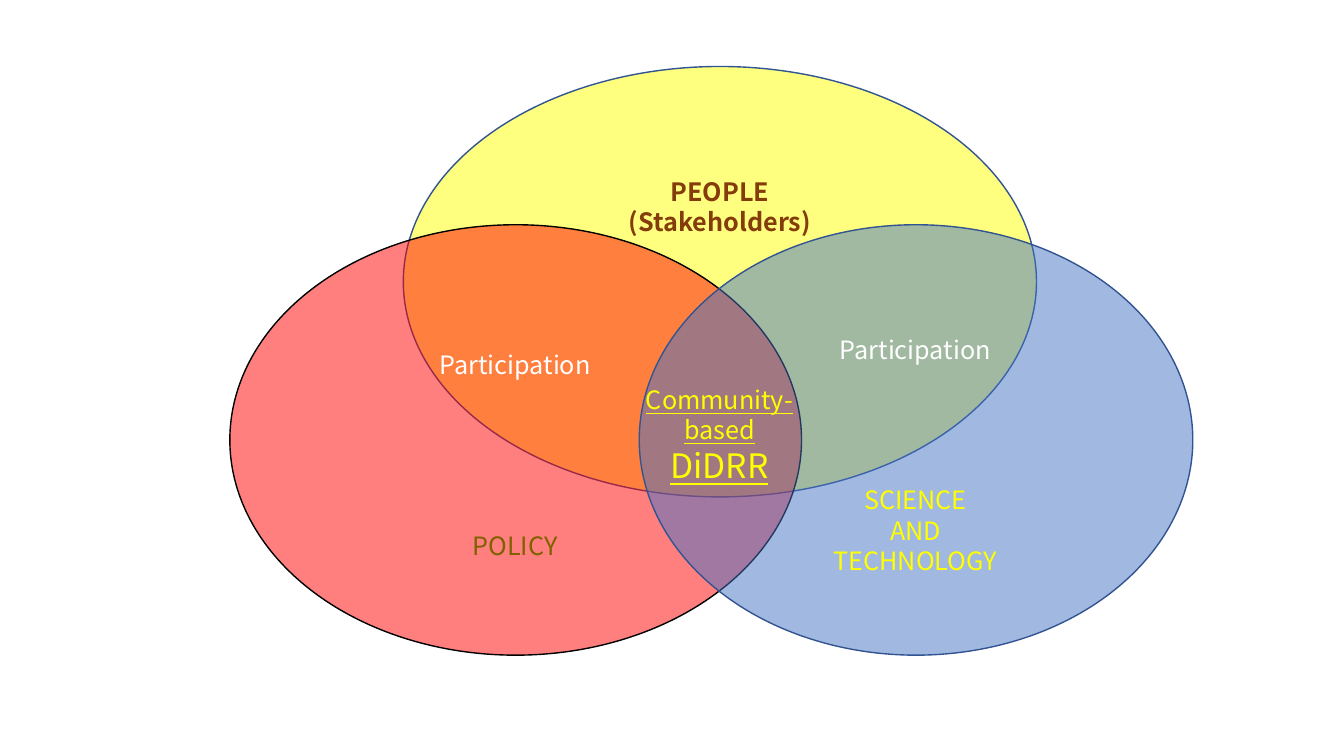
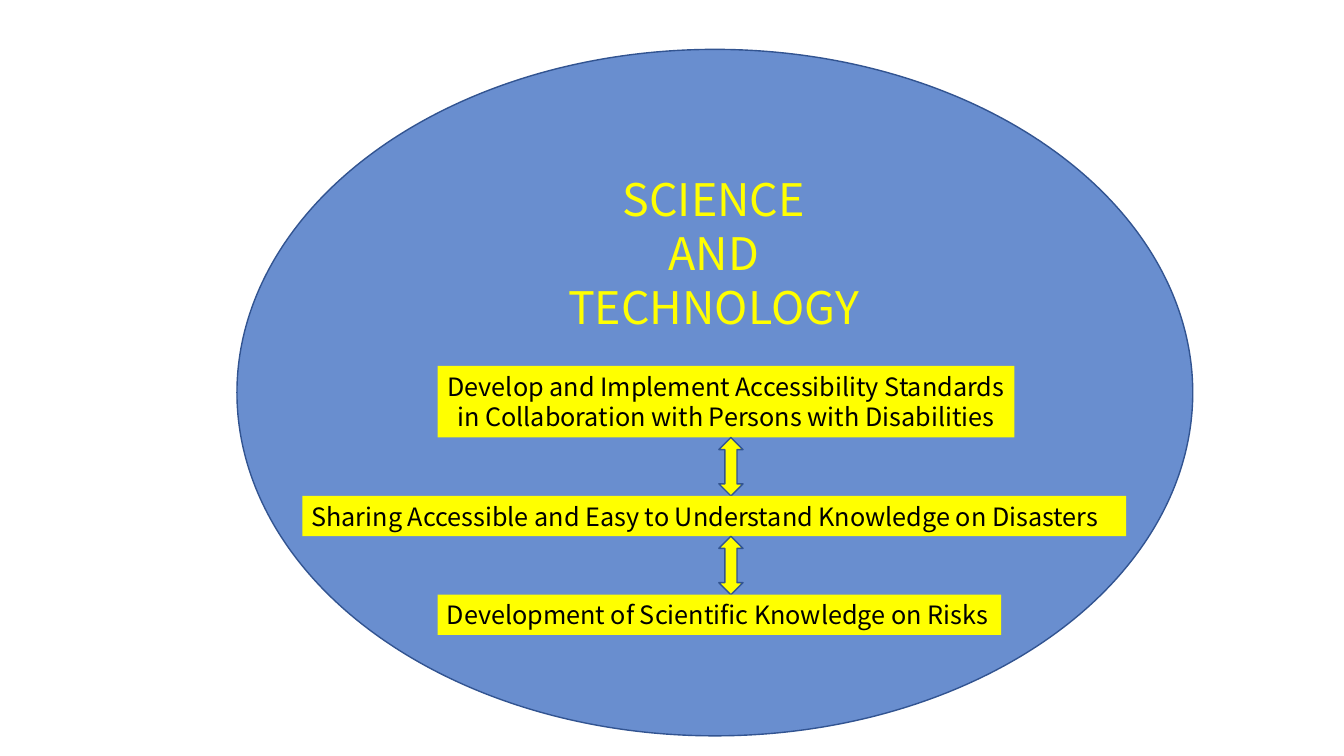
import pptx
import pptx.dml.color
import pptx.enum.shapes
import pptx.enum.text
import pptx.oxml.ns
import pptx.util
from lxml import etree
from pptx.util import Inches

FONT = "Noto Sans CJK JP"
COLORS = {
    "yellow": "FFFF00",
    "red": "FF0000",
    "blue": "4472C4",
    "outline": "325491",
    "black": "000000",
    "white": "FFFFFF",
    "brown": "843C0B",
    "olive": "806000",
}
SHAPES = pptx.enum.shapes.MSO_SHAPE
ALIGN = pptx.enum.text.PP_ALIGN
ANCHOR = pptx.enum.text.MSO_ANCHOR


def add_filled_shape(slide, kind, bounds, fill, line=None, opacity=100):
    """Add a shape without shadow; opacity is a percentage."""
    shape = slide.shapes.add_shape(kind, *map(Inches, bounds))
    shape.shadow.inherit = False
    shape.fill.solid()
    shape.fill.fore_color.rgb = pptx.dml.color.RGBColor.from_string(COLORS[fill])
    if opacity < 100:
        color = shape.fill._xPr.find(".//" + pptx.oxml.ns.qn("a:srgbClr"))
        alpha = etree.SubElement(color, pptx.oxml.ns.qn("a:alpha"))
        alpha.set("val", str(opacity * 1000))
    if line:
        shape.line.color.rgb = pptx.dml.color.RGBColor.from_string(COLORS[line])
        shape.line.width = pptx.util.Pt(1)
    else:
        shape.line.fill.background()
    return shape


def write_lines(shape, lines, color, align=ALIGN.CENTER, bold=False, underline=False):
    """Write one paragraph for each (text, point size) pair."""
    frame = shape.text_frame
    frame.word_wrap = True
    frame.vertical_anchor = ANCHOR.MIDDLE
    frame.margin_left = frame.margin_right = Inches(0.09)
    for index, (text, size) in enumerate(lines):
        paragraph = frame.add_paragraph() if index else frame.paragraphs[0]
        paragraph.alignment = align
        run = paragraph.add_run()
        run.text = text
        run.font.name = FONT
        run.font.size = pptx.util.Pt(size)
        run.font.bold = bold
        run.font.underline = underline
        run.font.color.rgb = pptx.dml.color.RGBColor.from_string(COLORS[color])


presentation = pptx.Presentation()
presentation.slide_width = Inches(13.33)
presentation.slide_height = Inches(7.5)
blank_layout = presentation.slide_layouts[6]

# Three overlapping circles
venn_slide = presentation.slides.add_slide(blank_layout)
for bounds, fill, line in [
    ((4, 0.66, 6.28, 4.27), "yellow", "outline"),
    ((2.28, 2.23, 5.67, 4.27), "red", "black"),
    ((6.34, 2.23, 5.49, 4.27), "blue", "outline"),
]:
    add_filled_shape(venn_slide, SHAPES.FLOWCHART_CONNECTOR, bounds, fill, line, 50)

people_x, policy_x, science_x = 7.14, 5.11, 9.08
label_width, label_height = 3, 1
for center_x, center_y, texts, color, bold in [
    (people_x, 2.05, ["PEOPLE", "(Stakeholders)"], "brown", True),
    (policy_x, 3.62, ["Participation"], "white", False),
    (policy_x, 5.41, ["POLICY"], "olive", False),
    (science_x, 3.47, ["Participation"], "white", False),
    (science_x, 5.26, ["SCIENCE", "AND", "TECHNOLOGY"], "yellow", False),
]:
    label = venn_slide.shapes.add_textbox(
        Inches(center_x - label_width / 2), Inches(center_y - label_height / 2),
        Inches(label_width), Inches(label_height))
    write_lines(label, [(text, 18) for text in texts], color, bold=bold)

core_label = venn_slide.shapes.add_textbox(
    Inches(6.29), Inches(3.76), Inches(1.69), Inches(1.11))
write_lines(core_label, [("Community-based", 18), ("DiDRR", 24)], "yellow", underline=True)

# Science and technology in detail
science_slide = presentation.slides.add_slide(blank_layout)
add_filled_shape(science_slide, SHAPES.FLOWCHART_CONNECTOR,
                 (2.35, 0.49, 9.48, 6.81), "blue", "outline", 80)
heading = science_slide.shapes.add_textbox(
    Inches(4.58), Inches(1.65), Inches(5), Inches(1.71))
write_lines(heading, [(text, 32) for text in ("SCIENCE", "AND", "TECHNOLOGY")], "yellow")

arrow_center, arrow_width, gap = 7.25, 0.24, 0.58
top = 3.63
steps = [
    (4.34, 5.72, 0.71, ALIGN.CENTER, "Develop and Implement Accessibility Standards "
     "in Collaboration with Persons with Disabilities"),
    (3, 8.17, 0.4, ALIGN.LEFT,
     "Sharing Accessible and Easy to Understand Knowledge on Disasters"),
    (4.34, 5.59, 0.4, ALIGN.LEFT, "Development of Scientific Knowledge on Risks"),
]
for index, (left, width, height, align, text) in enumerate(steps):
    if index:
        add_filled_shape(science_slide, SHAPES.UP_DOWN_ARROW,
                         (arrow_center - arrow_width / 2, top, arrow_width, gap),
                         "yellow", "outline")
        top += gap
    step = add_filled_shape(science_slide, SHAPES.RECTANGLE,
                            (left, top, width, height), "yellow")
    write_lines(step, [(text, 18)], "black", align)
    top += height

presentation.save("out.pptx")
